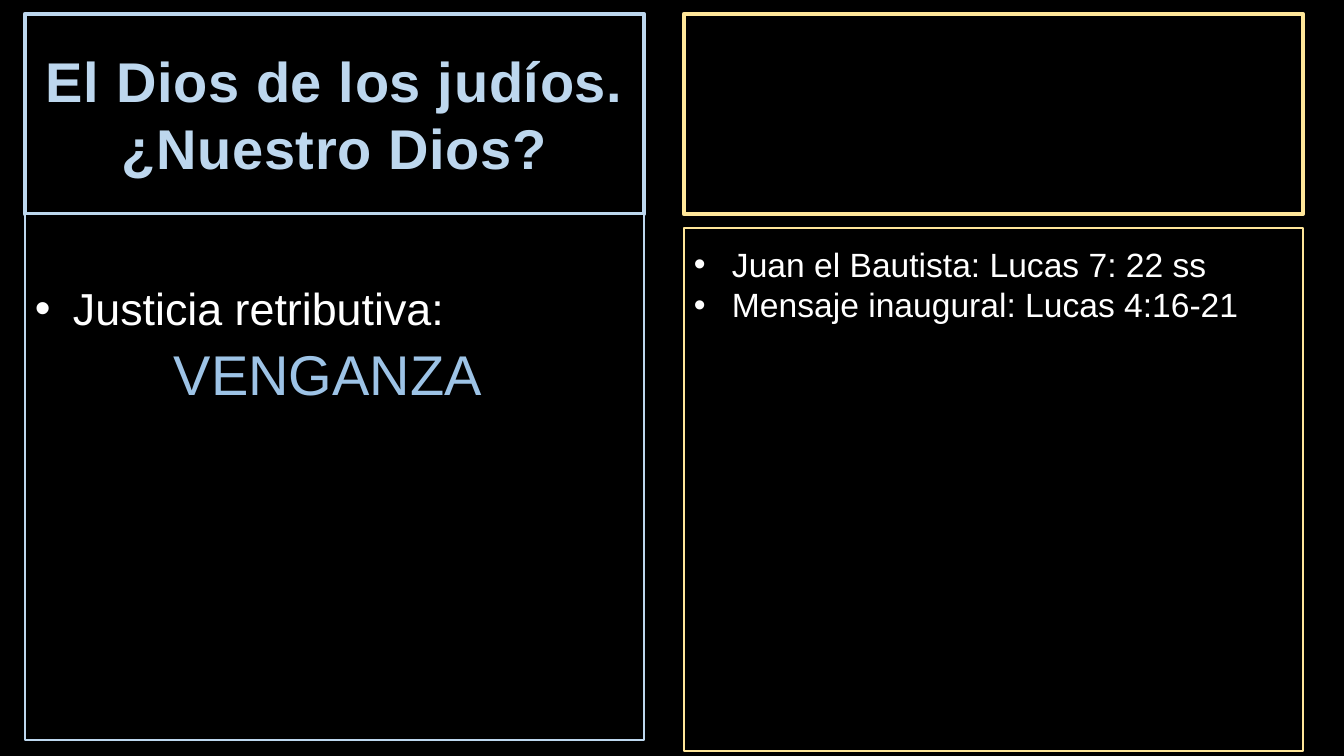
"""Builds a slide with two columns, each a heading callout above a body callout."""
import pptx
import pptx.dml.color
import pptx.enum.shapes
import pptx.enum.text
import pptx.oxml.ns
import pptx.util

SCALE = 914400 / 100.8
WIDE, HIGH = 1344, 756
BLACK, WHITE, BLUE, GOLD = "000000", "FFFFFF", "BDD7EE", "FFE699"
KIND = pptx.enum.shapes.MSO_SHAPE
ANCHOR = pptx.enum.text.MSO_ANCHOR
ALIGN = pptx.enum.text.PP_ALIGN

TITLE = {"size": 40, "color": BLUE, "bold": True, "align": ALIGN.CENTER, "track": 50}
POINT = {"size": 32, "color": WHITE, "bullet": True, "left": 38, "space": 1.07}
SHOUT = {"size": 40, "color": "9DC3E6", "left": 139, "space": 1.07}
VERSE = {"size": 24, "color": WHITE, "bullet": True, "left": 38}

HEAD = {"tip": (-0.21, 0.5), "width": 3, "anchor": ANCHOR.MIDDLE, "inset": 5}
BODY = {"tip": (-0.2, 0.5), "width": 1, "anchor": ANCHOR.TOP}
COLUMN = 619
PANELS = [
    (25, 14, 200, BLUE, HEAD,
     [("El Dios de los judíos.", TITLE), ("¿Nuestro Dios?", TITLE)]),
    (684, 14, 200, GOLD, HEAD, []),
    (25, 214, 526, BLUE, BODY | {"inset": 63},
     [("Justicia retributiva:", POINT), ("VENGANZA", SHOUT)]),
    (684, 228, 523, GOLD, BODY | {"inset": 16},
     [("Juan el Bautista: Lucas 7: 22 ss", VERSE),
      ("Mensaje inaugural: Lucas 4:16-21", VERSE)]),
]


def px(count):
    return pptx.util.Emu(round(count * SCALE))


def tint(code):
    return pptx.dml.color.RGBColor.from_string(code)


def apply(target, values):
    for name, value in values.items():
        setattr(target, name, value)


def add_box(slide, kind, area, edge, width):
    box = slide.shapes.add_shape(kind, *map(px, area))
    box.shadow.inherit = False
    box.fill.solid()
    box.fill.fore_color.rgb = tint(BLACK)
    box.line.color.rgb = tint(edge)
    box.line.width = pptx.util.Pt(width)
    return box


def add_line(para, text, look):
    apply(para, {"alignment": look.get("align", ALIGN.LEFT),
                 "line_spacing": look.get("space", 1.0)})
    run = para.add_run()
    run.text = text
    apply(run.font, {"name": "Arial", "size": pptx.util.Pt(look["size"]),
                     "bold": look.get("bold", False)})
    run.font.color.rgb = tint(look["color"])
    if "track" in look:
        run.font._element.set("spc", str(look["track"]))
    props = para._p.get_or_add_pPr()
    left = px(look.get("left", 0))
    props.set("marL", str(left))
    if look.get("bullet"):
        props.set("indent", str(-left))
        for tag, key, value in (("a:buFont", "typeface", "Arial"),
                                ("a:buChar", "char", "•")):
            mark = pptx.oxml.ns.qn(tag)
            props.append(props.makeelement(mark, {key: value}))


def add_panel(slide, left, top, height, edge, form, lines):
    area = (left, top, COLUMN, height)
    box = add_box(slide, KIND.RECTANGULAR_CALLOUT, area, edge, form["width"])
    for index, value in enumerate(form["tip"]):
        box.adjustments[index] = value
    frame = box.text_frame
    apply(frame, {"word_wrap": True, "vertical_anchor": form["anchor"],
                  "margin_left": px(10), "margin_right": px(10),
                  "margin_top": px(form["inset"]), "margin_bottom": px(5)})
    for index, (text, look) in enumerate(lines):
        para = frame.add_paragraph() if index else frame.paragraphs[0]
        add_line(para, text, look)


def main():
    deck = pptx.Presentation()
    apply(deck, {"slide_width": px(WIDE), "slide_height": px(HIGH)})
    slide = deck.slides.add_slide(deck.slide_layouts[6])
    add_box(slide, KIND.RECTANGLE, (0, 0, WIDE, 766), BLACK, 1)
    for panel in PANELS:
        add_panel(slide, *panel)
    deck.save("out.pptx")


if __name__ == "__main__":
    main()
